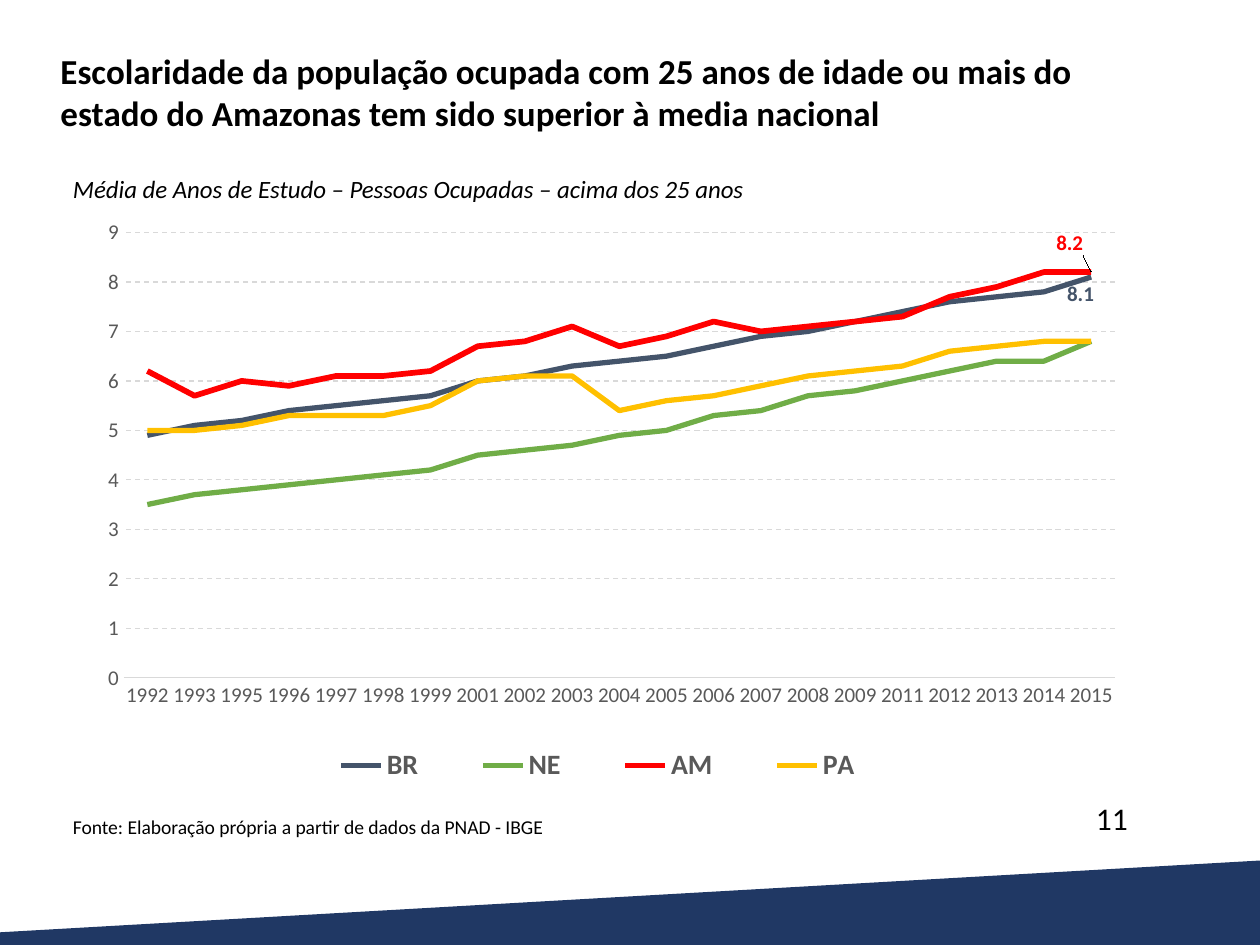
from dataclasses import dataclass

from lxml.etree import _Element, QName
from pptx import Presentation
from pptx.chart.chart import Chart
from pptx.chart.data import CategoryChartData
from pptx.dml.color import RGBColor
from pptx.enum.chart import XL_CHART_TYPE, XL_LABEL_POSITION, XL_LEGEND_POSITION, XL_TICK_MARK
from pptx.enum.dml import MSO_LINE
from pptx.enum.text import MSO_ANCHOR, PP_ALIGN
from pptx.oxml import parse_xml
from pptx.oxml.ns import qn
from pptx.slide import Slide
from pptx.text.text import Font, TextFrame
from pptx.util import Inches, Pt

COLORS = {
    "navy": "203864", "black": "000000", "gray": "595959", "grid": "D9D9D9",
    "slate": "44546A", "green": "70AD47", "red": "FF0000", "gold": "FFC000",
}
YEARS = [y for y in range(1992, 2016) if y not in (1994, 2000, 2010)]


@dataclass
class Note:
    text: str
    box: tuple[float, float, float, float]
    style: dict


@dataclass
class Line:
    name: str
    color: str
    width: float
    vals: list[float]
    spot: XL_LABEL_POSITION | None = None


NOTES = [
    Note("Fonte: Elaboração própria a partir de dados da PNAD - IBGE",
         (0.48, 6.42, 6.12, 0.29), {"size": Pt(11.2)}),
    Note("Média de Anos de Estudo – Pessoas Ocupadas – acima dos 25 anos",
         (0.48, 1.33, 8.71, 0.34), {"size": Pt(14.2), "italic": True}),
    Note("11", (8.6, 6.29, 0.96, 0.4), {"size": Pt(18)}),
]
TITLE = Note(
    "Escolaridade da população ocupada com 25 anos de idade ou mais do "
    "estado do Amazonas tem sido superior à media nacional",
    (0.38, 0.34, 8.71, 0.77), {"size": Pt(20), "bold": True})
LINES = [
    Line("BR", "slate", 3,
         [4.9, 5.1, 5.2, 5.4, 5.5, 5.6, 5.7, 6, 6.1, 6.3, 6.4, 6.5, 6.7, 6.9, 7,
          7.2, 7.4, 7.6, 7.7, 7.8, 8.1], XL_LABEL_POSITION.BELOW),
    Line("NE", "green", 3,
         [3.5, 3.7, 3.8, 3.9, 4, 4.1, 4.2, 4.5, 4.6, 4.7, 4.9, 5, 5.3, 5.4, 5.7,
          5.8, 6, 6.2, 6.4, 6.4, 6.8]),
    Line("AM", "red", 3.25,
         [6.2, 5.7, 6, 5.9, 6.1, 6.1, 6.2, 6.7, 6.8, 7.1, 6.7, 6.9, 7.2, 7, 7.1,
          7.2, 7.3, 7.7, 7.9, 8.2, 8.2], XL_LABEL_POSITION.ABOVE),
    Line("PA", "gold", 3,
         [5, 5, 5.1, 5.3, 5.3, 5.3, 5.5, 6, 6.1, 6.1, 5.4, 5.6, 5.7, 5.9, 6.1,
          6.2, 6.3, 6.6, 6.7, 6.8, 6.8]),
]


def tint(name: str) -> RGBColor:
    return RGBColor.from_string(COLORS[name])


def dress(font: Font, color: str, style: dict) -> None:
    for key, val in ({"name": "Calibri"} | style).items():
        setattr(font, key, val)
    font.color.rgb = tint(color)


def write(frame: TextFrame, note: Note) -> None:
    frame.word_wrap = True
    frame.vertical_anchor = MSO_ANCHOR.TOP
    para = frame.paragraphs[0]
    para.alignment = PP_ALIGN.LEFT
    run = para.add_run()
    run.text = note.text
    dress(run.font, "black", note.style)


def place(node: _Element, index: int, parts: dict) -> None:
    for old in node.findall(qn("c:layout")):
        node.remove(old)
    space = QName(qn("c:layout")).namespace
    body = "".join(f'<c:{key} val="{val}"/>' for key, val in parts.items())
    node.insert(index, parse_xml(
        f'<c:layout xmlns:c="{space}"><c:manualLayout>{body}</c:manualLayout></c:layout>'))


def frame_parts(x: float, y: float, w: float, h: float) -> dict:
    return {"xMode": "edge", "yMode": "edge", "x": x, "y": y, "w": w, "h": h}


def style_axes(chart: Chart) -> None:
    for axis in (chart.category_axis, chart.value_axis):
        axis.major_tick_mark = axis.minor_tick_mark = XL_TICK_MARK.NONE
        dress(axis.tick_labels.font, "gray", {"size": Pt(12)})
    base = chart.category_axis.format.line
    chart.value_axis.format.line.fill.background()
    chart.value_axis.minimum_scale = 0
    chart.value_axis.maximum_scale = 9
    chart.value_axis.major_unit = 1
    grid = chart.value_axis.major_gridlines.format.line
    for line in (base, grid):
        line.color.rgb = tint("grid")
        line.width = Pt(0.75)
    grid.dash_style = MSO_LINE.DASH


def add_lines(slide: Slide) -> None:
    data = CategoryChartData()
    data.categories = [str(y) for y in YEARS]
    for line in LINES:
        data.add_series(line.name, line.vals)
    box = [Inches(v) for v in (0.64, 1.66, 8.55, 4.65)]
    chart = slide.shapes.add_chart(XL_CHART_TYPE.LINE, *box, data).chart
    chart.has_title = False
    chart.has_legend = True
    dress(chart.font, "black", {"size": Pt(12)})
    style_axes(chart)
    chart.legend.position = XL_LEGEND_POSITION.RIGHT
    chart.legend.include_in_layout = False
    dress(chart.legend.font, "gray", {"size": Pt(16), "bold": True})
    plot = chart.plots[0]
    plot.vary_by_categories = False
    for line, row in zip(LINES, plot.series):
        row.smooth = False
        row.format.line.color.rgb = tint(line.color)
        row.format.line.width = Pt(line.width)
        if line.spot is not None:
            label = row.points[len(YEARS) - 1].data_label
            dress(label.font, line.color, {"size": Pt(12), "bold": True})
            label.position = line.spot
    root = chart.element
    area = next(root.iter(qn("c:plotArea")))
    place(area, 0, {"layoutTarget": "inner"} | frame_parts(0.04, 0.04, 0.92, 0.76))
    place(next(root.iter(qn("c:legend"))), 1, frame_parts(0.19, 0.9, 0.58, 0.1))
    shifts = [(-0.01, 0), (-0.02, -0.02)]
    for tag, (x, y) in zip(root.iter(qn("c:dLbl")), shifts):
        place(tag, 1, {"x": x, "y": y})


def add_band(slide: Slide) -> None:
    pen = slide.shapes.build_freeform(0, Inches(7.4))
    spots = [(10, 6.83), (10, 7.5), (0, 7.5)]
    pen.add_line_segments([(Inches(x), Inches(y)) for x, y in spots])
    band = pen.convert_to_shape()
    band.shadow.inherit = False
    band.fill.solid()
    band.fill.fore_color.rgb = tint("navy")
    band.line.fill.background()


def main() -> None:
    deck = Presentation()
    deck.slide_width, deck.slide_height = Inches(10), Inches(7.5)
    slide = deck.slides.add_slide(deck.slide_layouts[5])
    add_band(slide)
    add_lines(slide)
    title = slide.shapes.title
    sides = ("left", "top", "width", "height")
    for side, val in zip(sides, TITLE.box):
        setattr(title, side, Inches(val))
    write(title.text_frame, TITLE)
    for note in NOTES:
        box = slide.shapes.add_textbox(*[Inches(v) for v in note.box])
        write(box.text_frame, note)
    deck.save("out.pptx")


if __name__ == "__main__":
    main()
